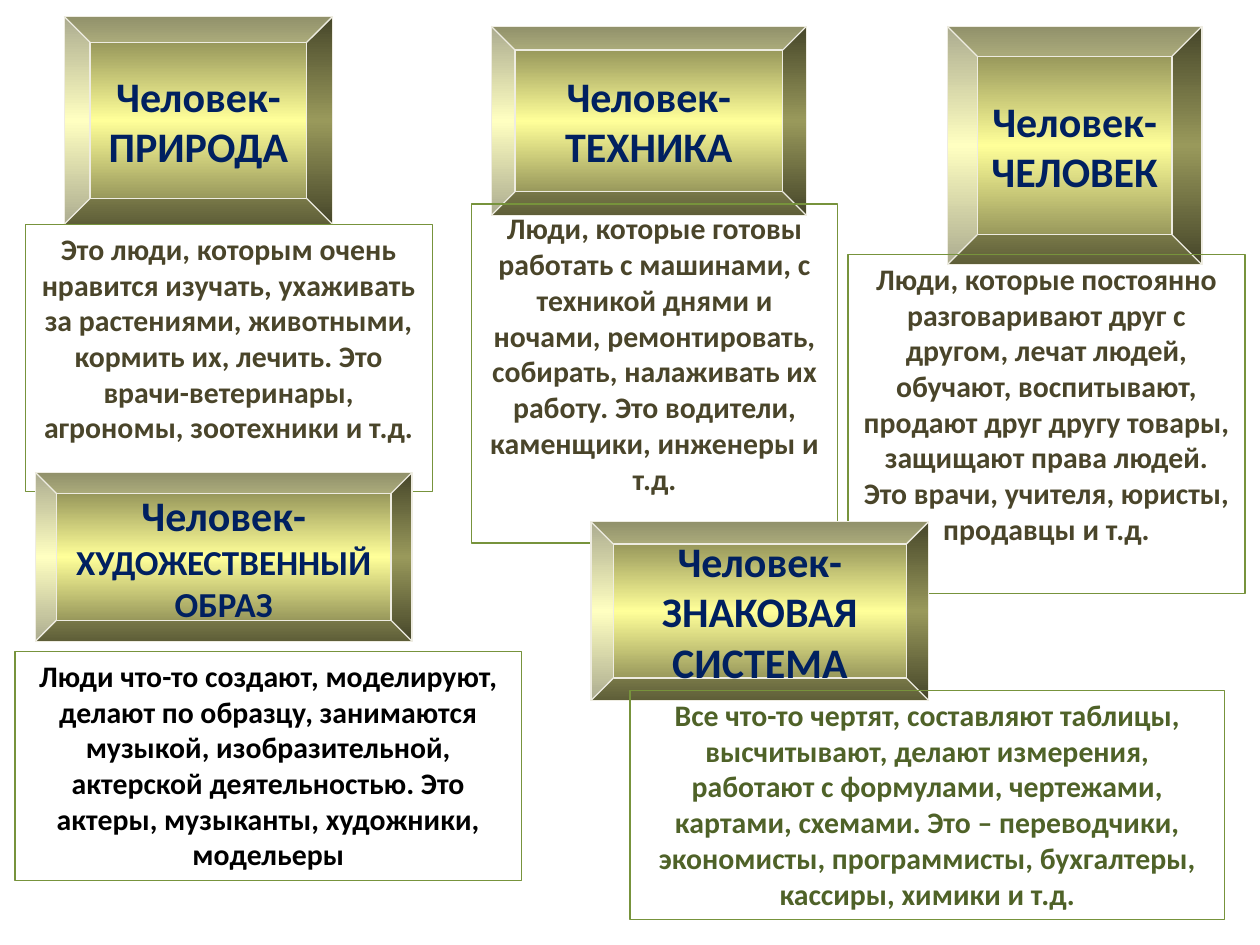
from copy import deepcopy
from dataclasses import dataclass

from pptx import Presentation
from pptx.dml.color import RGBColor
from pptx.enum.shapes import MSO_SHAPE
from pptx.enum.text import MSO_ANCHOR, PP_ALIGN
from pptx.oxml.ns import qn
from pptx.shapes.autoshape import Shape
from pptx.slide import Slide
from pptx.util import Pt

BEVEL = MSO_SHAPE.BEVEL
RECT = MSO_SHAPE.RECTANGLE
CENTER = PP_ALIGN.CENTER
MIDDLE = MSO_ANCHOR.MIDDLE
TOP = MSO_ANCHOR.TOP


@dataclass(frozen=True)
class Theme:
    font: str = "Calibri"
    head: float = 24
    small: float = 20
    body: float = 17
    rule: float = 0.75
    navy: str = "002060"
    brown: str = "4A452A"
    black: str = "000000"
    green: str = "4F6228"
    olive: str = "767647"
    yellow: str = "FFFF99"
    cream: str = "EEECE1"
    frame: str = "77933C"


THEME = Theme()


@dataclass(frozen=True)
class Box:
    x: float
    y: float
    w: float
    h: float


@dataclass(frozen=True)
class Title:
    box: Box
    lines: tuple[str, ...]
    size: float = THEME.head


@dataclass(frozen=True)
class Note:
    box: Box
    text: str
    color: str = THEME.brown


ITEMS = (
    Title(Box(36.7, 9.4, 153.4, 118.8), ("ПРИРОДА",)),
    Title(Box(280.8, 15.1, 180, 108), ("ТЕХНИКА",)),
    Title(Box(541.4, 15.1, 145.4, 136.1), ("ЧЕЛОВЕК",)),
    Note(Box(14.4, 128.2, 232.6, 152.6),
         "Это люди, которым очень нравится изучать, ухаживать за растениями, "
         "животными, кормить их, лечить. Это врачи-ветеринары, агрономы, "
         "зоотехники и т.д."),
    Note(Box(269.3, 116.6, 209.5, 193.7),
         "Люди, которые готовы работать с машинами, с техникой днями и ночами, "
         "ремонтировать, собирать, налаживать их работу. Это водители, "
         "каменщики, инженеры и т.д."),
    Note(Box(484.6, 145.4, 226.8, 193.7),
         "Люди, которые постоянно разговаривают друг с другом, лечат людей, "
         "обучают, воспитывают, продают друг другу товары, защищают права "
         "людей. Это врачи, учителя, юристы, продавцы и т.д."),
    Title(Box(20.2, 270, 215.3, 96.5), ("ХУДОЖЕСТВЕННЫЙ", "ОБРАЗ"), THEME.small),
    Title(Box(337.7, 298.1, 193, 102.2), ("ЗНАКОВАЯ", "СИСТЕМА")),
    Note(Box(8.6, 372.2, 289.4, 131),
         "Люди что-то создают, моделируют, делают по образцу, занимаются "
         "музыкой, изобразительной, актерской деятельностью. Это актеры, "
         "музыканты, художники, модельеры", THEME.black),
    Note(Box(360, 394.6, 339.8, 131),
         "Все что-то чертят, составляют таблицы, высчитывают, делают измерения, "
         "работают с формулами, чертежами, картами, схемами. Это – переводчики, "
         "экономисты, программисты, бухгалтеры, кассиры, химики и т.д.",
         THEME.green),
)


def write(shape: Shape, text: str, *, size: float, color: str,
          first: bool = True) -> None:
    frame = shape.text_frame
    para = frame.paragraphs[0] if first else frame.add_paragraph()
    para.alignment = CENTER
    run = para.add_run()
    run.text = text
    run.font.name = THEME.font
    run.font.size = Pt(size)
    run.font.bold = True
    run.font.color.rgb = RGBColor.from_string(color)


def add_box(slide: Slide, kind: MSO_SHAPE, box: Box, line: str) -> Shape:
    shape = slide.shapes.add_shape(
        kind, Pt(box.x), Pt(box.y), Pt(box.w), Pt(box.h))
    shape.shadow.inherit = False
    shape.line.color.rgb = RGBColor.from_string(line)
    shape.line.width = Pt(THEME.rule)
    return shape


def shade(shape: Shape) -> None:
    fill = shape.fill
    fill.gradient()
    fill.gradient_angle = 90
    for stop, place, color in zip(
            fill.gradient_stops, (0, 0.5), (THEME.olive, THEME.yellow)):
        stop.position = place
        stop.color.rgb = RGBColor.from_string(color)
    stops = shape.element.spPr.find(qn("a:gradFill")).find(qn("a:gsLst"))
    last = deepcopy(stops[0])
    last.set("pos", "100000")
    stops.append(last)


def add_title(slide: Slide, title: Title) -> None:
    shape = add_box(slide, BEVEL, title.box, THEME.cream)
    shade(shape)
    shape.text_frame.word_wrap = False
    shape.text_frame.vertical_anchor = MIDDLE
    write(shape, "Человек-", size=THEME.head, color=THEME.navy)
    for line in title.lines:
        write(shape, line, size=title.size, color=THEME.navy, first=False)


def add_note(slide: Slide, note: Note) -> None:
    shape = add_box(slide, RECT, note.box, THEME.frame)
    shape.fill.background()
    shape.text_frame.word_wrap = True
    shape.text_frame.vertical_anchor = TOP
    write(shape, note.text, size=THEME.body, color=note.color)


def main() -> None:
    deck = Presentation()
    deck.slide_width, deck.slide_height = Pt(720), Pt(540)
    slide = deck.slides.add_slide(deck.slide_layouts[6])
    for item in ITEMS:
        if isinstance(item, Title):
            add_title(slide, item)
        else:
            add_note(slide, item)
    deck.save("out.pptx")


if __name__ == "__main__":
    main()
